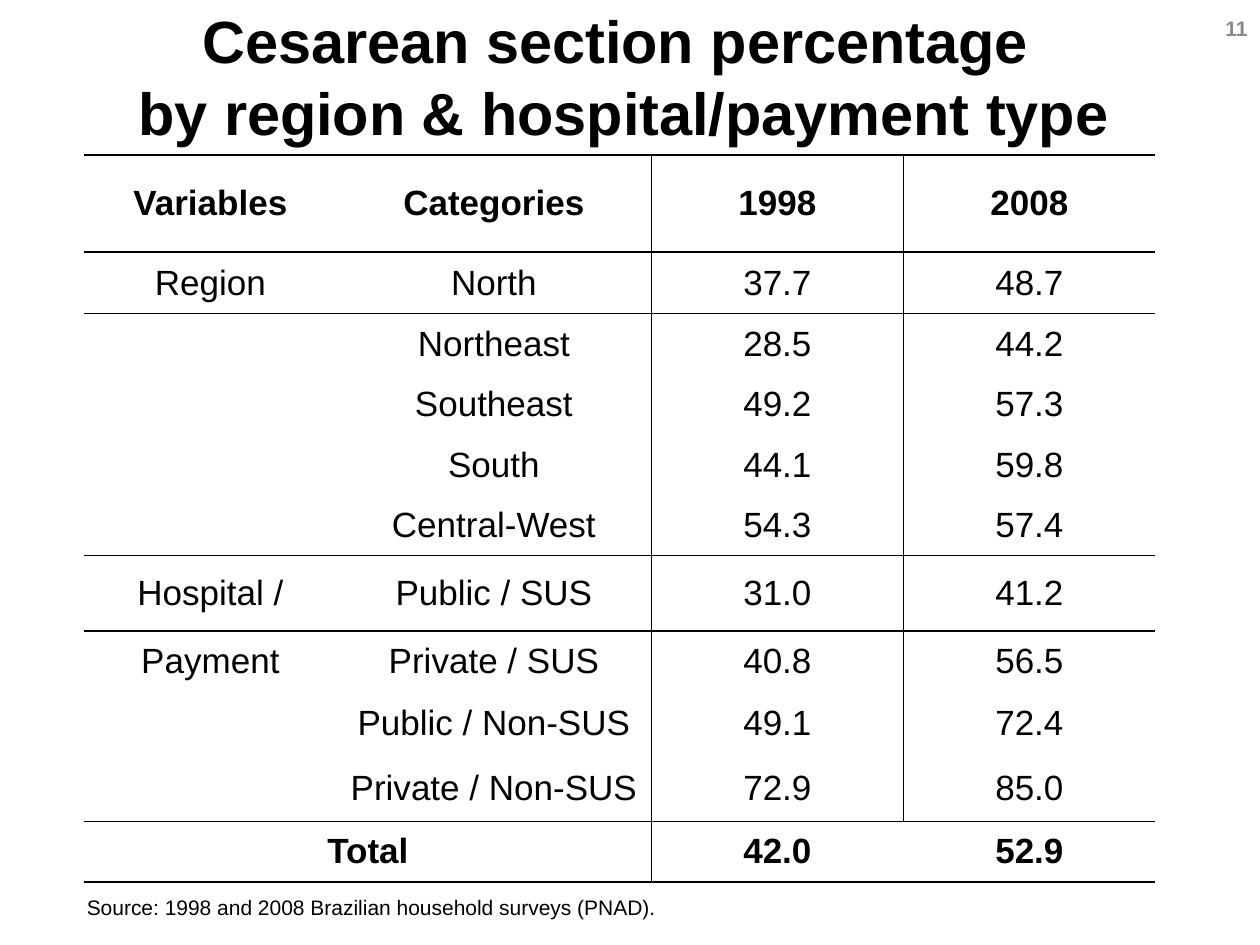
import pptx
import pptx.util
import pptx.dml.color
import pptx.enum.text
import pptx.oxml
import pptx.oxml.ns

Inches = pptx.util.Inches
Align = pptx.enum.text.PP_ALIGN
Anchor = pptx.enum.text.MSO_ANCHOR
COLORS = {"ink": "000000", "paper": "FFFFFF", "number": "898989"}
NO_STYLE = "{2D5ABB26-0587-4C30-8999-92F81FD0307C}"


def style_text(frame, size, bold, align, color="ink"):
    frame.word_wrap = True
    para = frame.paragraphs[0]
    para.alignment = align
    para.font.name = "Arial"
    para.font.size = pptx.util.Pt(size)
    para.font.bold = bold
    para.font.color.rgb = pptx.dml.color.RGBColor.from_string(COLORS[color])
    return para


def add_border(cell, side):
    cell._tc.get_or_add_tcPr().append(pptx.oxml.parse_xml(
        f'<a:ln{side} {pptx.oxml.ns.nsdecls("a")} w="12700"><a:solidFill>'
        f'<a:srgbClr val="{COLORS["ink"]}"/></a:solidFill></a:ln{side}>'))


deck = pptx.Presentation()
deck.slide_width, deck.slide_height = Inches(10), Inches(7.5)
page = deck.slides.add_slide(deck.slide_layouts[6])

number_box = page.shapes.add_textbox(Inches(9.49), Inches(0), Inches(0.51), Inches(0.44))
number_box.text_frame.text = "11"
number_box.text_frame.vertical_anchor = Anchor.MIDDLE
style_text(number_box.text_frame, 12, True, Align.RIGHT, "number")

rows = [
    ("Variables", "Categories", "1998", "2008"),
    ("Region", "North", "37.7", "48.7"),
    ("", "Northeast", "28.5", "44.2"),
    ("", "Southeast", "49.2", "57.3"),
    ("", "South", "44.1", "59.8"),
    ("", "Central-West", "54.3", "57.4"),
    ("Hospital /", "Public / SUS", "31.0", "41.2"),
    ("Payment", "Private / SUS", "40.8", "56.5"),
    ("", "Public / Non-SUS", "49.1", "72.4"),
    ("", "Private / Non-SUS", "72.9", "85.0"),
    ("Total", "", "42.0", "52.9"),
]
column_widths = [2, 2.5, 2, 2]
row_heights = [0.77, 0.49, 0.48, 0.48, 0.48, 0.48, 0.6, 0.48, 0.51, 0.52, 0.48]
ruled_edges = {0, 1, 6, 10, 11}
divider_edge = 2
last_row = len(rows) - 1

table = page.shapes.add_table(
    len(rows), len(column_widths), Inches(0.67), Inches(1.23),
    Inches(sum(column_widths)), Inches(sum(row_heights))).table
table.first_row = table.horz_banding = False
table._tbl.tblPr.find(pptx.oxml.ns.qn("a:tableStyleId")).text = NO_STYLE
for column, width in zip(table.columns, column_widths):
    column.width = Inches(width)
for row, height in zip(table.rows, row_heights):
    row.height = Inches(height)
table.cell(last_row, 0).merge(table.cell(last_row, 1))

for r, values in enumerate(rows):
    for c, value in enumerate(values):
        cell = table.cell(r, c)
        cell.text = value
        cell.vertical_anchor = Anchor.MIDDLE
        roomy = r == 0 or c == 0
        cell.margin_left = cell.margin_right = Inches(0.1 if roomy else 0.07)
        cell.margin_top = cell.margin_bottom = Inches(0.05 if roomy else 0)
        style_text(cell.text_frame, 20, r in (0, last_row), Align.CENTER)
        right_edge = c + 2 if cell.is_merge_origin else c + 1
        borders = {"L": c == divider_edge, "R": right_edge == divider_edge,
                   "T": r in ruled_edges, "B": r + 1 in ruled_edges}
        for side, ruled in borders.items():
            if ruled:
                add_border(cell, side)
        cell.fill.solid()
        cell.fill.fore_color.rgb = pptx.dml.color.RGBColor.from_string(COLORS["paper"])

title_box = page.shapes.add_textbox(Inches(0.25), Inches(0.05), Inches(9.4), Inches(1.1))
title_box.text_frame.text = "Cesarean section percentage \vby region & hospital/payment type"
title_box.text_frame.vertical_anchor = Anchor.MIDDLE
style_text(title_box.text_frame, 34, True, Align.CENTER)

source_box = page.shapes.add_textbox(Inches(0.59), Inches(7.01), Inches(4.75), Inches(0.36))
source_box.text_frame.text = "Source: 1998 and 2008 Brazilian household surveys (PNAD)."
source = style_text(source_box.text_frame, 12, False, Align.JUSTIFY)
source.line_spacing = 1.2
source.space_after = pptx.util.Pt(20)
source._p.pPr.set("marL", str(Inches(0.38)))
source._p.pPr.set("indent", str(Inches(-0.38)))

deck.save("out.pptx")
